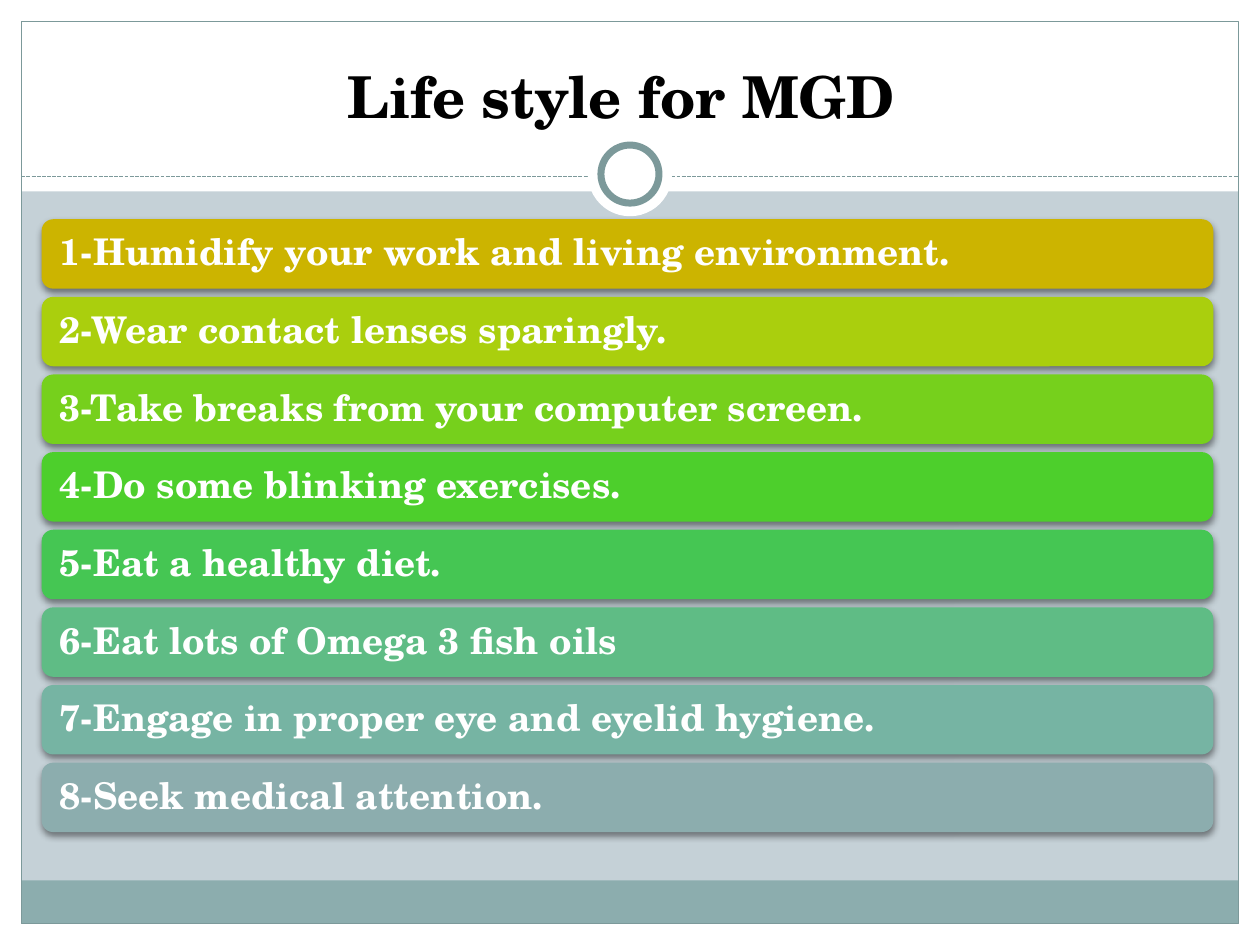
from lxml.etree import SubElement
from pptx import Presentation
from pptx.dml.color import RGBColor
from pptx.enum.dml import MSO_LINE_DASH_STYLE as Dash
from pptx.enum.shapes import MSO_CONNECTOR as Connector, MSO_SHAPE as Shape
from pptx.enum.text import MSO_ANCHOR as Anchor, PP_ALIGN as Align
from pptx.oxml.ns import qn
from pptx.util import Cm, Pt

TITLE = "Life style for MGD "
ADVICE = [
    ("1-Humidify your work and living environment.", "CCB400"),
    ("2-Wear contact lenses sparingly.", "AACF0D"),
    ("3-Take breaks from your computer screen.", "76D01C"),
    ("4-Do some blinking exercises.", "4DCF2C"),
    ("5-Eat a healthy diet.", "45C653"),
    ("6-Eat lots of Omega 3 fish oils", "5FBC85"),
    ("7-Engage in proper eye and eyelid hygiene.", "76B4A3"),
    ("8-Seek medical attention.", "8CADAE"),
]
THEME = {
    "font": "TeX Gyre Schola", "title_size": 33, "advice_size": 21,
    "background": "C5D1D7", "paper": "FFFFFF", "band": "8CADAE",
    "outline": "7C999A", "title": "000000", "advice": "FFFFFF", "shadow": "000000",
}
WIDTH, HEIGHT, MARGIN = 25.4, 19.05, 0.43
INNER_WIDTH, INNER_HEIGHT = WIDTH - 2 * MARGIN, HEIGHT - 2 * MARGIN
HEADER_HEIGHT, FOOTER_HEIGHT = 3.86, 0.87
RULE_TOP, RING_CENTER = 3.56, 3.51
BAR_LEFT, BAR_TOP, BAR_WIDTH, BAR_HEIGHT, BAR_PITCH = 0.84, 4.42, 23.62, 1.4, 1.565


def set_format(target, values):
    for name, value in values.items():
        setattr(target, name, value)


def set_line(line, color, width):
    line.color.rgb = RGBColor.from_string(color)
    line.width = Pt(width)


def add_shape(slide, kind, box, fill=None, line_width=None):
    shape = slide.shapes.add_shape(kind, *map(Cm, box))
    shape.shadow.inherit = False
    if fill:
        shape.fill.solid()
        shape.fill.fore_color.rgb = RGBColor.from_string(fill)
    else:
        shape.fill.background()
    if line_width:
        set_line(shape.line, THEME["outline"], line_width)
    else:
        shape.line.fill.background()
    return shape


def add_circle(slide, diameter, line_width=None):
    box = (WIDTH - diameter) / 2, RING_CENTER - diameter / 2, diameter, diameter
    add_shape(slide, Shape.OVAL, box, THEME["paper"], line_width)


def add_shadow(shape):
    effects = shape._element.spPr.find(qn("a:effectLst"))
    shadow = SubElement(effects, qn("a:outerShdw"), blurRad=str(Pt(4)),
                        dist=str(Pt(2)), dir="5400000", rotWithShape="0")
    color = SubElement(shadow, qn("a:srgbClr"), val=THEME["shadow"])
    SubElement(color, qn("a:alpha"), val="45000")


def write_text(shape, text, role, frame_format, paragraph_format):
    frame = shape.text_frame
    set_format(frame, {"word_wrap": True, **frame_format})
    paragraph = frame.paragraphs[0]
    set_format(paragraph, paragraph_format)
    run = paragraph.add_run()
    run.text = text
    set_format(run.font, {"name": THEME["font"], "bold": True,
                          "size": Pt(THEME[role + "_size"])})
    run.font.color.rgb = RGBColor.from_string(THEME[role])


def add_backdrop(slide):
    slide.background.fill.solid()
    slide.background.fill.fore_color.rgb = RGBColor.from_string(THEME["background"])
    for box in [
        (0, HEIGHT - MARGIN, WIDTH, MARGIN),
        (0, 0, WIDTH, HEADER_HEIGHT),
        (0, 0, MARGIN, HEIGHT),
        (WIDTH - MARGIN, 0, MARGIN, HEIGHT),
    ]:
        add_shape(slide, Shape.RECTANGLE, box, THEME["paper"])
    footer = MARGIN, HEIGHT - MARGIN - FOOTER_HEIGHT, INNER_WIDTH, FOOTER_HEIGHT
    add_shape(slide, Shape.RECTANGLE, footer, THEME["band"])
    add_shape(slide, Shape.RECTANGLE, (MARGIN, MARGIN, INNER_WIDTH, INNER_HEIGHT),
              line_width=0.75)
    ends = MARGIN, RULE_TOP, WIDTH - MARGIN, RULE_TOP
    rule = slide.shapes.add_connector(Connector.STRAIGHT, *map(Cm, ends))
    set_line(rule.line, THEME["outline"], 0.75)
    rule.line.dash_style = Dash.SQUARE_DOT
    SubElement(rule._element.spPr, qn("a:effectLst"))
    add_circle(slide, 1.7)
    add_circle(slide, 1.17, 4)


def add_advice(slide):
    for index, (text, color) in enumerate(ADVICE):
        box = BAR_LEFT, BAR_TOP + index * BAR_PITCH, BAR_WIDTH, BAR_HEIGHT
        bar = add_shape(slide, Shape.ROUNDED_RECTANGLE, box, color)
        add_shadow(bar)
        write_text(bar, text, "advice",
                   {"vertical_anchor": Anchor.MIDDLE, "margin_left": Cm(0.3),
                    "margin_right": Cm(0.3)},
                   {"alignment": Align.LEFT, "line_spacing": 0.9})


def main():
    """Build the slide of life style advice for MGD."""
    presentation = Presentation()
    set_format(presentation, {"slide_width": Cm(WIDTH), "slide_height": Cm(HEIGHT)})
    slide = presentation.slides.add_slide(presentation.slide_layouts[6])
    add_backdrop(slide)
    title = slide.shapes.add_textbox(Cm(0.84), Cm(0.64), Cm(23.7), Cm(2.1))
    write_text(title, TITLE, "title", {"vertical_anchor": Anchor.BOTTOM},
               {"alignment": Align.CENTER})
    add_advice(slide)
    presentation.save("out.pptx")


if __name__ == "__main__":
    main()
